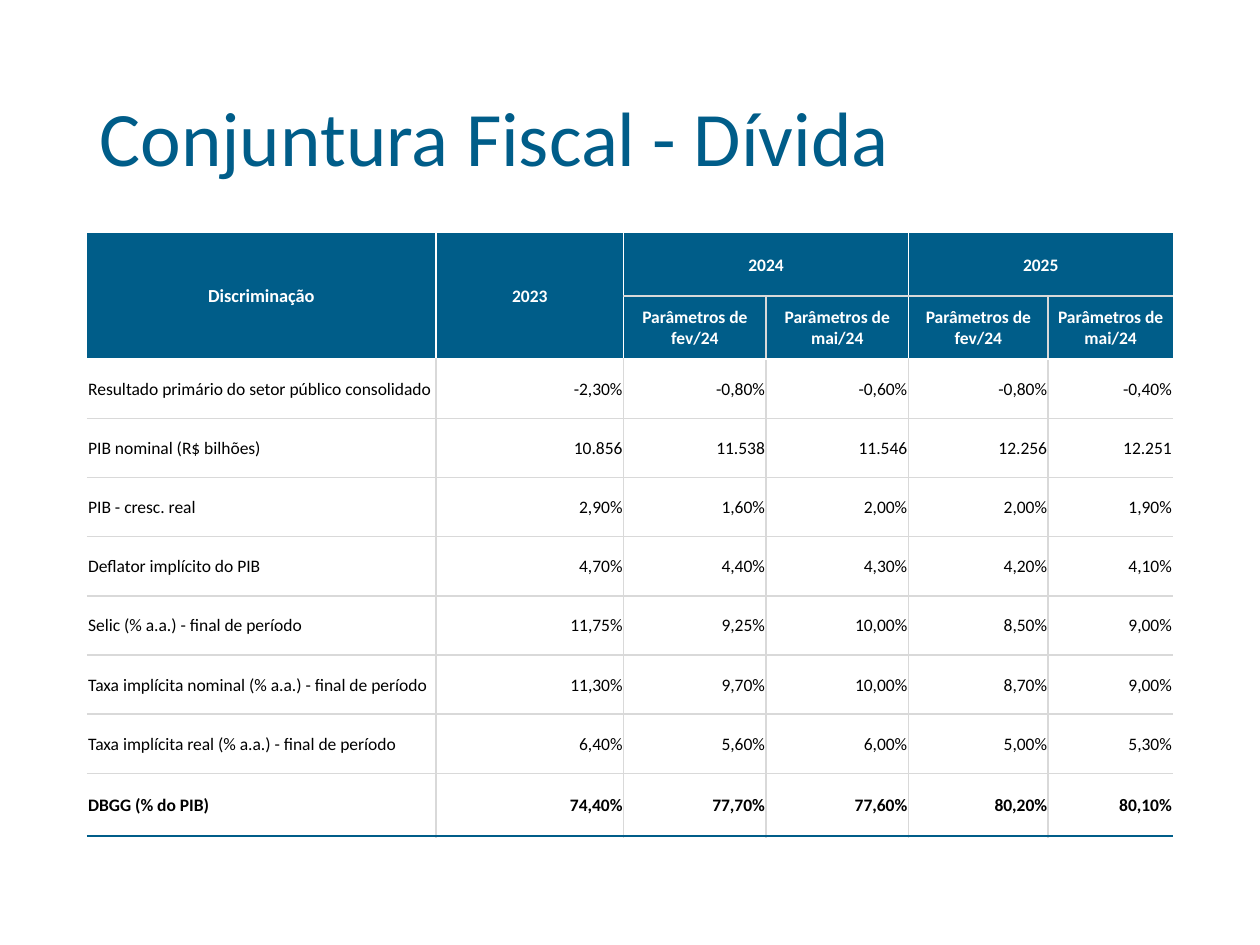
from lxml.etree import SubElement
from pptx import Presentation
from pptx.dml.color import RGBColor
from pptx.enum.text import MSO_ANCHOR, PP_ALIGN
from pptx.oxml.ns import qn
from pptx.util import Inches, Pt

# Content
TITLE = "Conjuntura Fiscal - Dívida"
FEBRUARY, MAY = "Parâmetros de fev/24", "Parâmetros de mai/24"
HEADER = [
    ["Discriminação", "2023", "2024", "", "2025", ""],
    ["", "", FEBRUARY, MAY, FEBRUARY, MAY],
]
BODY = [
    ["Resultado primário do setor público consolidado", "-2,30%", "-0,80%", "-0,60%", "-0,80%", "-0,40%"],
    ["PIB nominal (R$ bilhões)", "10.856", "11.538", "11.546", "12.256", "12.251"],
    ["PIB - cresc. real", "2,90%", "1,60%", "2,00%", "2,00%", "1,90%"],
    ["Deflator implícito do PIB", "4,70%", "4,40%", "4,30%", "4,20%", "4,10%"],
    ["Selic (% a.a.) - final de período", "11,75%", "9,25%", "10,00%", "8,50%", "9,00%"],
    ["Taxa implícita nominal (% a.a.) - final de período", "11,30%", "9,70%", "10,00%", "8,70%", "9,00%"],
    ["Taxa implícita real (% a.a.) - final de período", "6,40%", "5,60%", "6,00%", "5,00%", "5,30%"],
    ["DBGG (% do PIB)", "74,40%", "77,70%", "77,60%", "80,20%", "80,10%"],
]
ROWS = HEADER + BODY
MERGES = [((0, 0), (1, 0)), ((0, 1), (1, 1)), ((0, 2), (0, 3)), ((0, 4), (0, 5))]

# Layout and style
LEFT, WIDTH = 0.69, 8.62
TITLE_TOP, TABLE_TOP = 0.4, 1.85
COLUMN_WIDTHS = [2.77, 1.49, 1.13, 1.13, 1.11, 0.99]
ROW_HEIGHTS = [0.5] * len(HEADER) + [0.47] * (len(BODY) - 1) + [0.5]
FONT = "Calibri"
BLUE = RGBColor(0x00, 0x5D, 0x89)
GRAY = RGBColor(0xD9, 0xD9, 0xD9)
WHITE = RGBColor(0xFF, 0xFF, 0xFF)
BLACK = RGBColor(0x00, 0x00, 0x00)


def add_run(paragraph, text, size, color, bold=False):
    run = paragraph.add_run()
    run.text = text
    run.font.name = FONT
    run.font.size = Pt(size)
    run.font.bold = bold
    run.font.color.rgb = color


def vertical_rule(row, edge):
    """Colour and width of the line left of column number `edge`."""
    if edge in (0, len(COLUMN_WIDTHS)):
        return None
    inside_year = edge in (3, 5)
    return (WHITE if row < len(HEADER) and not inside_year else GRAY), 1


def horizontal_rule(column, edge):
    """Colour and width of the line above row number `edge`."""
    if edge == 0:
        return None
    if edge == len(ROWS):
        return BLUE, 1.5
    return (WHITE if edge == len(HEADER) else GRAY), 1


def set_borders(cell, row, column):
    last_row = row + cell.span_height
    last_column = column + cell.span_width
    rules = [
        ("a:lnL", vertical_rule(row, column)),
        ("a:lnR", vertical_rule(row, last_column)),
        ("a:lnT", horizontal_rule(column, row)),
        ("a:lnB", horizontal_rule(column, last_row)),
    ]
    properties = cell._tc.get_or_add_tcPr()
    for position, (tag, rule) in enumerate(rules):
        line = SubElement(properties, qn(tag))
        properties.insert(position, line)
        if rule is None:
            SubElement(line, qn("a:noFill"))
        else:
            color, width = rule
            line.set("w", str(Pt(width)))
            fill = SubElement(line, qn("a:solidFill"))
            SubElement(fill, qn("a:srgbClr")).set("val", str(color))


def format_cell(cell, row, column):
    is_header = row < len(HEADER)
    if is_header:
        cell.fill.solid()
        cell.fill.fore_color.rgb = BLUE
    else:
        cell.fill.background()
    if cell.is_spanned:
        return
    cell.vertical_anchor = MSO_ANCHOR.MIDDLE
    cell.margin_left = cell.margin_right = cell.margin_top = Inches(0.01)
    cell.margin_bottom = 0
    paragraph = cell.text_frame.paragraphs[0]
    if is_header:
        paragraph.alignment = PP_ALIGN.CENTER
    else:
        paragraph.alignment = PP_ALIGN.RIGHT if column else PP_ALIGN.LEFT
    size = 10.5 if row == column == 0 else 10
    bold = is_header or row == len(ROWS) - 1
    add_run(paragraph, ROWS[row][column], size, WHITE if is_header else BLACK, bold)
    set_borders(cell, row, column)


def main():
    presentation = Presentation()
    presentation.slide_width, presentation.slide_height = Inches(10), Inches(7.5)
    slide = presentation.slides.add_slide(presentation.slide_layouts[5])

    # Title
    title = slide.shapes.title
    title.left, title.top = Inches(LEFT), Inches(TITLE_TOP)
    title.width, title.height = Inches(WIDTH), Inches(TABLE_TOP - TITLE_TOP)
    title.text_frame.vertical_anchor = MSO_ANCHOR.MIDDLE
    paragraph = title.text_frame.paragraphs[0]
    paragraph.alignment = PP_ALIGN.LEFT
    paragraph.line_spacing = 0.9
    add_run(paragraph, TITLE, 44, BLUE)

    # Debt table
    table = slide.shapes.add_table(
        len(ROWS), len(COLUMN_WIDTHS), Inches(LEFT), Inches(TABLE_TOP),
        Inches(WIDTH), Inches(sum(ROW_HEIGHTS)),
    ).table
    table.first_row = table.horz_banding = False
    for column, width in zip(table.columns, COLUMN_WIDTHS):
        column.width = Inches(width)
    for row, height in zip(table.rows, ROW_HEIGHTS):
        row.height = Inches(height)
    for first, last in MERGES:
        table.cell(*first).merge(table.cell(*last))
    for row in range(len(ROWS)):
        for column in range(len(COLUMN_WIDTHS)):
            format_cell(table.cell(row, column), row, column)

    presentation.save("out.pptx")


if __name__ == "__main__":
    main()
